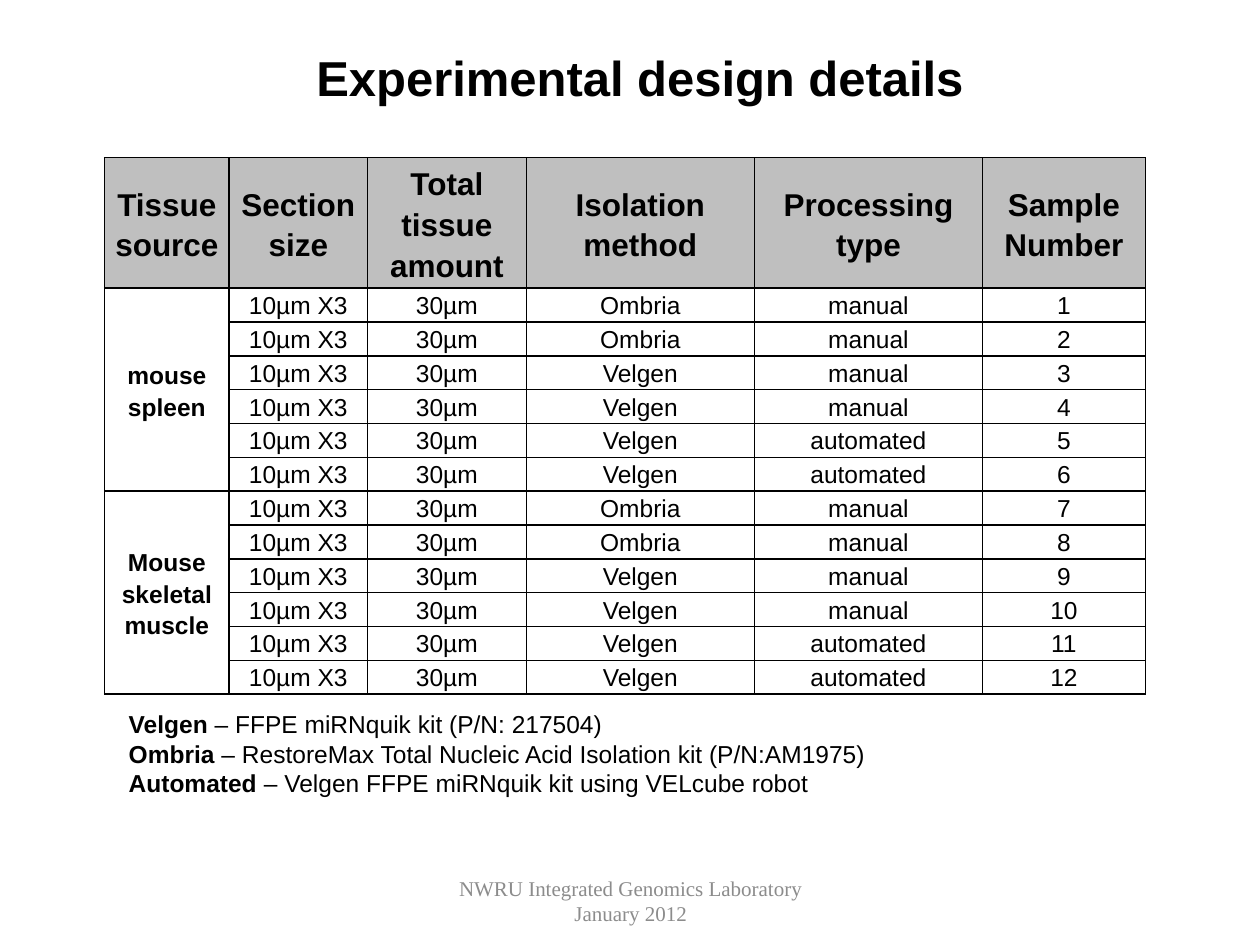
from dataclasses import dataclass

from lxml.etree import SubElement
from pptx import Presentation
from pptx.dml.color import RGBColor
from pptx.enum.text import MSO_ANCHOR as ANCHOR, MSO_AUTO_SIZE as FIT, PP_ALIGN as ALIGN
from pptx.oxml.ns import qn
from pptx.util import Cm, Pt


@dataclass(frozen=True)
class Theme:
    font: str = "Arial"
    footer_font: str = "Times New Roman"
    ink: str = "000000"
    header_fill: str = "BFBFBF"
    footer_ink: str = "8C8C8C"
    title: int = 28
    header: int = 18
    text: int = 14
    footer: int = 12
    line: float = 1
    divider: float = 1.5


THEME = Theme()
HEADERS = ["Tissue source", "Section size", "Total tissue amount",
           "Isolation method", "Processing type", "Sample Number"]
TISSUES = [["mouse spleen"], ["Mouse", "skeletal muscle"]]
TREATMENTS = (2 * [("Ombria", "manual")] + 2 * [("Velgen", "manual")]
              + 2 * [("Velgen", "automated")])
COL_WIDTHS = [2.51, 2.79, 3.2, 4.6, 4.6, 3.28]
HEADER_HEIGHT, ROW_HEIGHT = 1.68, 0.66
KIT_NOTES = [
    ("Velgen", " – FFPE miRNquik kit (P/N: 217504)"),
    ("Ombria", " – RestoreMax Total Nucleic Acid Isolation kit (P/N:AM1975)"),
    ("Automated", " – Velgen FFPE miRNquik kit using VELcube robot"),
]


def set_all(obj, values):
    for name, value in values.items():
        setattr(obj, name, value)


def place(sp, left, top, width, height):
    set_all(sp, dict(left=Cm(left), top=Cm(top), width=Cm(width), height=Cm(height)))


def add_run(p, text, size, bold=False, font=THEME.font, color=THEME.ink):
    r = p.add_run()
    r.text = text
    set_all(r.font, dict(name=font, size=Pt(size), bold=bold))
    r.font.color.rgb = RGBColor.from_string(color)


def add_title(slide, text):
    sp = slide.shapes.title
    place(sp, 1.47, 0.84, 22.86, 16.84)
    tf = sp.text_frame
    set_all(tf, dict(vertical_anchor=ANCHOR.TOP, word_wrap=True, auto_size=FIT.NONE))
    p = tf.paragraphs[0]
    p.alignment = ALIGN.CENTER
    add_run(p, text, THEME.title, bold=True)


def add_notes(slide, notes):
    sp = slide.placeholders[1]
    place(sp, 2.34, 14.17, 18.21, 2.82)
    tf = sp.text_frame
    set_all(tf, dict(vertical_anchor=ANCHOR.TOP, word_wrap=True, auto_size=FIT.NONE))
    for i, (term, detail) in enumerate(notes):
        p = tf.add_paragraph() if i else tf.paragraphs[0]
        set_all(p, dict(alignment=ALIGN.LEFT, space_before=Pt(0)))
        pPr = p._p.get_or_add_pPr()
        pPr.set("marL", "0")
        pPr.set("indent", "0")
        SubElement(pPr, qn("a:buNone"))
        add_run(p, term, THEME.text, bold=True)
        add_run(p, detail, THEME.text)


def add_footer(slide, text):
    sp = slide.shapes.add_textbox(0, 0, 0, 0)
    place(sp, 8.69, 17.65, 8.05, 1.02)
    tf = sp.text_frame
    set_all(tf, dict(word_wrap=True, vertical_anchor=ANCHOR.MIDDLE))
    p = tf.paragraphs[0]
    p.alignment = ALIGN.CENTER
    add_run(p, text, THEME.footer, font=THEME.footer_font, color=THEME.footer_ink)


def set_borders(cell, **widths):
    tcPr = cell._tc.get_or_add_tcPr()
    for i, side in enumerate("LRTB"):
        width = widths.get(side, THEME.line)
        ln = tcPr.makeelement(qn(f"a:ln{side}"), {"w": str(Pt(width))})
        fill = SubElement(ln, qn("a:solidFill"))
        SubElement(fill, qn("a:srgbClr"), val=THEME.ink)
        tcPr.insert(i, ln)


def fill_cell(cell, lines, size=THEME.text, bold=False, anchor=ANCHOR.TOP, fill=None):
    set_all(cell, dict(margin_left=Cm(0.18), margin_right=Cm(0.18),
                       margin_top=0, margin_bottom=0, vertical_anchor=anchor))
    if fill:
        cell.fill.solid()
        cell.fill.fore_color.rgb = RGBColor.from_string(fill)
    else:
        cell.fill.background()
    tf = cell.text_frame
    for i, line in enumerate(lines):
        p = tf.add_paragraph() if i else tf.paragraphs[0]
        set_all(p, dict(alignment=ALIGN.CENTER, line_spacing=1.15))
        add_run(p, line, size, bold)


def add_design_table(slide):
    group = len(TREATMENTS)
    count = group * len(TISSUES)
    table = slide.shapes.add_table(
        count + 1, len(HEADERS), Cm(2.11), Cm(3.18), Cm(sum(COL_WIDTHS)),
        Cm(HEADER_HEIGHT + count * ROW_HEIGHT)).table
    set_all(table, dict(first_row=False, horz_banding=False))
    for col, width in zip(table.columns, COL_WIDTHS):
        col.width = Cm(width)
    for i, row in enumerate(table.rows):
        row.height = Cm(ROW_HEIGHT if i else HEADER_HEIGHT)

    for c, text in enumerate(HEADERS):
        fill_cell(table.cell(0, c), [text], THEME.header, True,
                  ANCHOR.MIDDLE, THEME.header_fill)
    for t, tissue in enumerate(TISSUES):
        first = 1 + t * group
        label = table.cell(first, 0)
        label.merge(table.cell(first + group - 1, 0))
        fill_cell(label, tissue, bold=True, anchor=ANCHOR.MIDDLE)
        for row, (method, processing) in enumerate(TREATMENTS, first):
            values = ["10µm X3", "30µm", method, processing, str(row)]
            for c, text in enumerate(values, 1):
                fill_cell(table.cell(row, c), [text])

    for r in range(count + 1):
        for c in range(len(HEADERS)):
            widths = {}
            if r == group or (r == 1 and c == 0):
                widths["B"] = THEME.divider
            if r == group + 1:
                widths["T"] = THEME.divider
            set_borders(table.cell(r, c), **widths)


def main():
    prs = Presentation()
    set_all(prs, dict(slide_width=Cm(25.4), slide_height=Cm(19.05)))
    slide = prs.slides.add_slide(prs.slide_layouts[1])
    add_footer(slide, "NWRU Integrated Genomics Laboratory January 2012")
    add_title(slide, "Experimental design details")
    add_design_table(slide)
    add_notes(slide, KIT_NOTES)
    prs.save("out.pptx")


if __name__ == "__main__":
    main()
